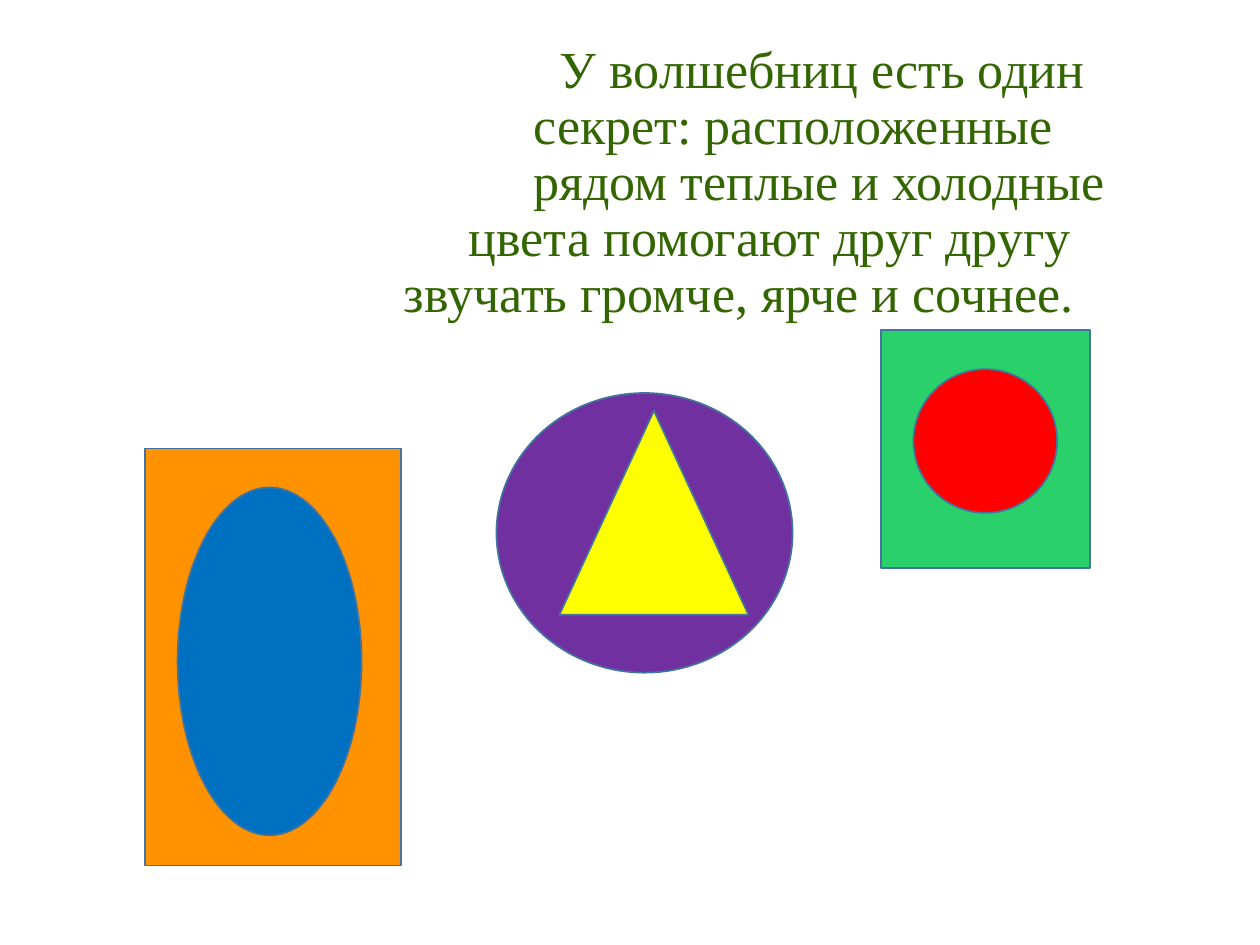
from pptx import Presentation
from pptx.dml.color import RGBColor
from pptx.enum.shapes import MSO_SHAPE
from pptx.enum.text import MSO_ANCHOR
from pptx.util import Pt

COLORS = {
    "text": "336600", "outline": "43739E", "green": "2AD069", "red": "FF0000",
    "purple": "7030A0", "yellow": "FFFF00", "orange": "FF9201", "blue": "0070C0",
}

prs = Presentation()
prs.slide_width, prs.slide_height = Pt(720), Pt(540)
s = prs.slides.add_slide(prs.slide_layouts[6])

# Text, each line with its own left indent
lines = [
    (245, "У волшебниц есть один"),
    (230, "секрет: расположенные"),
    (230, "рядом теплые и холодные"),
    (193, "цвета помогают друг другу"),
    (156, "звучать громче, ярче и сочнее."),
]
tf = s.shapes.add_textbox(Pt(67.7), Pt(52.6), Pt(620.6), Pt(104.4)).text_frame
tf.word_wrap = True
tf.vertical_anchor = MSO_ANCHOR.MIDDLE
for i, (indent, text) in enumerate(lines):
    p = tf.paragraphs[0] if i == 0 else tf.add_paragraph()
    p.text = text
    p.line_spacing = 0.9
    p._p.get_or_add_pPr().set("marL", str(Pt(indent)))
    p.font.name = "Times New Roman"
    p.font.size = Pt(29.7)
    p.font.color.rgb = RGBColor.from_string(COLORS["text"])

# Pairs of warm and cold shapes, outer one first
figures = [
    (MSO_SHAPE.RECTANGLE, "green", 503.3, 188.6, 119.5, 136.1),
    (MSO_SHAPE.OVAL, "red", 522, 211, 82.1, 82.1),
    (MSO_SHAPE.OVAL, "purple", 283.7, 224.6, 169.2, 159.8),
    (MSO_SHAPE.ISOSCELES_TRIANGLE, "yellow", 319.7, 234.7, 108, 116.6),
    (MSO_SHAPE.RECTANGLE, "orange", 82.8, 256.3, 146.2, 238.3),
    (MSO_SHAPE.OVAL, "blue", 101.5, 278.6, 105.1, 198.7),
]
for kind, color, *box in figures:
    sp = s.shapes.add_shape(kind, *map(Pt, box))
    sp.shadow.inherit = False
    sp.fill.solid()
    sp.fill.fore_color.rgb = RGBColor.from_string(COLORS[color])
    sp.line.color.rgb = RGBColor.from_string(COLORS["outline"])
    sp.line.width = Pt(1)

prs.save("out.pptx")
